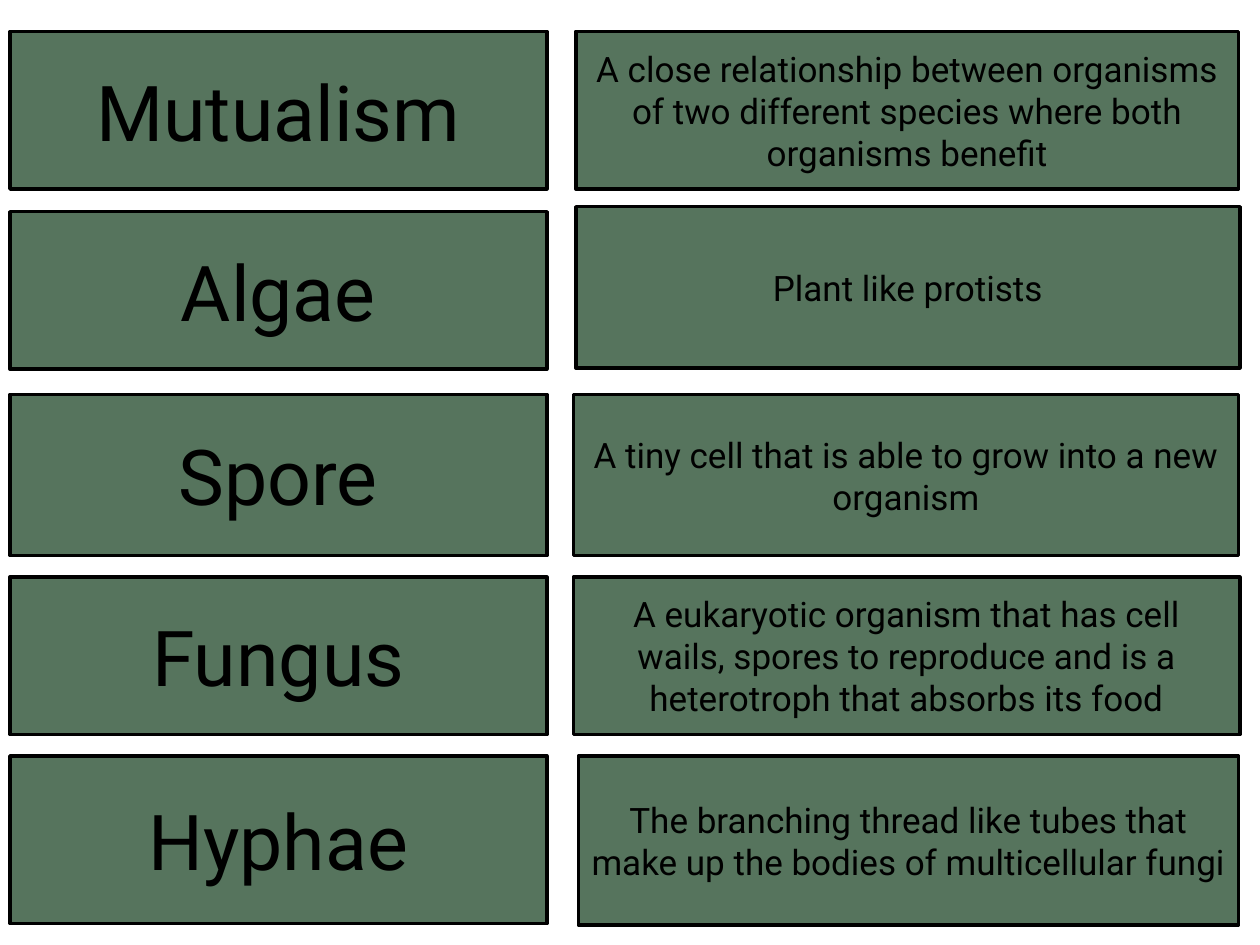
from dataclasses import dataclass

from pptx import Presentation
from pptx.dml.color import RGBColor
from pptx.enum.shapes import MSO_SHAPE
from pptx.enum.text import MSO_ANCHOR, PP_ALIGN
from pptx.util import Inches, Pt


@dataclass(frozen=True)
class Theme:
    card: RGBColor = RGBColor(0x56, 0x74, 0x5D)
    ink: RGBColor = RGBColor(0, 0, 0)
    font: str = "Roboto"
    term_size: Pt = Pt(44)
    definition_size: Pt = Pt(20)
    border: Pt = Pt(2)


theme = Theme()

prs = Presentation()
prs.slide_width, prs.slide_height = Inches(10), Inches(7.5)
slide = prs.slides.add_slide(prs.slide_layouts[6])


def add_card(left, top, width, height, text, size):
    card = slide.shapes.add_shape(
        MSO_SHAPE.FLOWCHART_PROCESS,
        Inches(left), Inches(top), Inches(width), Inches(height))
    card.shadow.inherit = False
    card.fill.solid()
    card.fill.fore_color.rgb = theme.card
    card.line.color.rgb = theme.ink
    card.line.width = theme.border

    frame = card.text_frame
    frame.word_wrap = True
    frame.vertical_anchor = MSO_ANCHOR.MIDDLE
    paragraph = frame.paragraphs[0]
    paragraph.alignment = PP_ALIGN.CENTER
    run = paragraph.add_run()
    run.text = text
    run.font.name = theme.font
    run.font.size = size
    run.font.color.rgb = theme.ink


# Each row: term, its top and height; definition, its left, top, width and height
TERM_LEFT, TERM_WIDTH = 0.08, 4.26
glossary = [
    ("Mutualism", 0.25, 1.25,
     "A close relationship between organisms of two different species "
     "where both organisms benefit", 4.57, 0.25, 5.26, 1.25),
    ("Algae", 1.68, 1.25,
     "Plant like protists", 4.57, 1.64, 5.27, 1.28),
    ("Spore", 3.13, 1.28,
     "A tiny cell that is able to grow into a new organism",
     4.55, 3.13, 5.28, 1.28),
    ("Fungus", 4.58, 1.25,
     "A eukaryotic organism that has cell wails, spores to reproduce "
     "and is a heterotroph that absorbs its food", 4.55, 4.58, 5.29, 1.25),
    ("Hyphae", 6, 1.33,
     "The branching thread like tubes that make up the bodies of "
     "multicellular fungi", 4.59, 6, 5.24, 1.34),
]

# Term on the left, definition on the right
for term, term_top, term_height, definition, left, top, width, height in glossary:
    add_card(TERM_LEFT, term_top, TERM_WIDTH, term_height, term, theme.term_size)
    add_card(left, top, width, height, definition, theme.definition_size)

prs.save("out.pptx")
